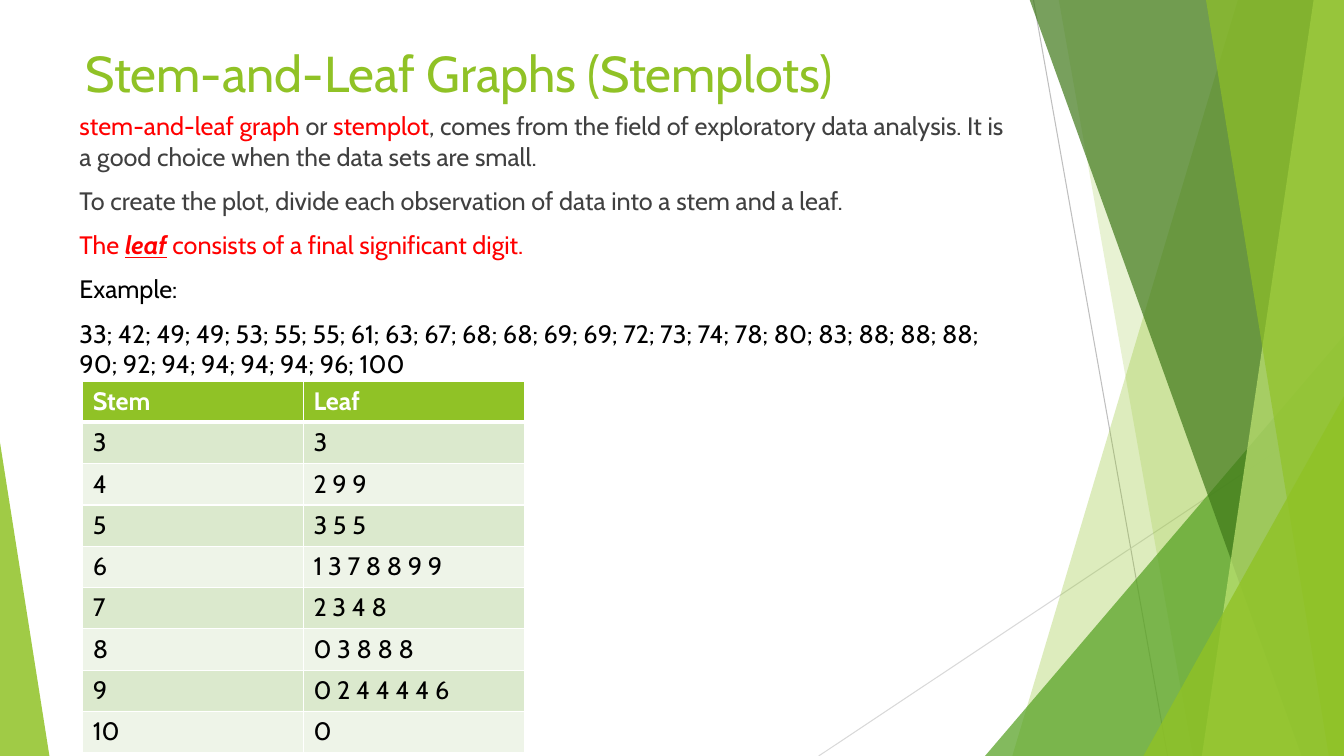
"""Build the stem-and-leaf graphs slide."""
import lxml.etree
import pptx
import pptx.dml.color
import pptx.enum.shapes
import pptx.oxml.ns
import pptx.util

Inches, Pt = pptx.util.Inches, pptx.util.Pt
RGBColor = pptx.dml.color.RGBColor
qn = pptx.oxml.ns.qn

WHITE = RGBColor(0xFF, 0xFF, 0xFF)
BLACK = RGBColor(0x00, 0x00, 0x00)
RED = RGBColor(0xFF, 0x00, 0x00)
GRAY = RGBColor(0x40, 0x40, 0x40)
LIME = RGBColor(0x90, 0xC2, 0x26)
GREEN = RGBColor(0x54, 0xA0, 0x21)
FOREST = RGBColor(0x3F, 0x78, 0x19)
PALE_LIME = RGBColor(0xC0, 0xE4, 0x74)
BAND_DARK = RGBColor(0xDB, 0xE9, 0xCD)
BAND_LIGHT = RGBColor(0xEE, 0xF4, 0xE8)
LINE_DARK = RGBColor(0xBF, 0xBF, 0xBF)
LINE_LIGHT = RGBColor(0xD9, 0xD9, 0xD9)

FONT = "Cabin"
WIDTH, HEIGHT = 13.33, 7.5

TITLE = [[("Stem-and-Leaf Graphs (Stemplots)", {"color": LIME, "size": Pt(36)})]]
BODY = [
    [("stem-and-leaf graph ", {"color": RED}), ("or ", {"color": GRAY}),
     ("stemplot", {"color": RED}),
     (", comes from the field of exploratory data analysis. It is a good choice "
      "when the data sets are small.", {"color": GRAY})],
    [("To create the plot, divide each observation of data into a stem and a leaf.",
      {"color": GRAY})],
    [("The ", {"color": RED}),
     ("leaf", {"color": RED, "bold": True, "italic": True, "underline": True}),
     (" consists of a final significant digit.", {"color": RED})],
    [("Example:", {"color": BLACK})],
    [("33; 42; 49; 49; 53; 55; 55; 61; 63; 67; 68; 68; 69; 69; 72; 73; 74; 78; 80; "
      "83; 88; 88; 88; 90; 92; 94; 94; 94; 94; 96; 100", {"color": BLACK})],
]
STEMPLOT = [
    ("Stem", "Leaf"),
    ("3", "3"),
    ("4", "2 9 9"),
    ("5", "3 5 5"),
    ("6", "1 3 7 8 8 9 9"),
    ("7", "2 3 4 8"),
    ("8", "0 3 8 8 8"),
    ("9", "0 2 4 4 4 4 6"),
    ("10", "0"),
]
LINES = [
    ((10.25, 0, 11.58, HEIGHT), LINE_DARK),
    ((WIDTH, 4.03, 8.12, HEIGHT), LINE_LIGHT),
]
FACETS = [
    ("band", (12.28, 10.04), LIME, 30),
    ("band", (10.5, 11.83), LIME, 20),
    ("triangle", (9.77, 3.33, 3.56, 1), GREEN, 72),
    ("band", (10.21, 12.91), FOREST, 70),
    ("band", (13.03, 11.92), PALE_LIME, 70),
    ("band", (11.96, 13.18), LIME, 65),
    ("triangle", (11.34, 3.93, 1.99, 1), LIME, 80),
    ("triangle", (0, 4.39, 0.49, 0), LIME, 85),
]


def add_line(s, ends, color):
    line = s.shapes.add_connector(
        pptx.enum.shapes.MSO_CONNECTOR.STRAIGHT, *map(Inches, ends))
    line.line.color.rgb = color
    line.line.width = Pt(0.75)
    lxml.etree.SubElement(line._element.spPr, qn("a:effectLst"))


def add_facet(s, kind, place, color, opacity):
    if kind == "band":
        top_x, bottom_x = place
        fb = s.shapes.build_freeform(Inches(top_x), Inches(-0.01))
        corners = [(WIDTH, -0.01), (WIDTH, HEIGHT), (bottom_x, HEIGHT)]
        fb.add_line_segments([(Inches(x), Inches(y)) for x, y in corners])
        sp = fb.convert_to_shape()
    else:
        left, top, width, apex = place
        sp = s.shapes.add_shape(
            pptx.enum.shapes.MSO_SHAPE.ISOSCELES_TRIANGLE,
            *map(Inches, (left, top, width, HEIGHT - top)))
        sp.adjustments[0] = apex
    sp.shadow.inherit = False
    sp.fill.solid()
    sp.fill.fore_color.rgb = color
    srgb = sp._element.spPr.find(".//" + qn("a:srgbClr"))
    lxml.etree.SubElement(srgb, qn("a:alpha"), val=str(opacity * 1000))
    sp.line.fill.background()


def add_run(p, text, formats):
    r = p.add_run()
    r.text = text
    for name, value in {"name": FONT, "size": Pt(18), **formats}.items():
        if name == "color":
            r.font.color.rgb = value
        else:
            setattr(r.font, name, value)


def add_text(s, box, paragraphs, space_before):
    tf = s.shapes.add_textbox(*map(Inches, box)).text_frame
    tf.word_wrap = True
    for i, runs in enumerate(paragraphs):
        p = tf.add_paragraph() if i else tf.paragraphs[0]
        p.space_before = Pt(space_before)
        for text, formats in runs:
            add_run(p, text, formats)


def add_borders(cell, widths):
    tcPr = cell._tc.get_or_add_tcPr()
    for side, width in widths.items():
        ln = lxml.etree.SubElement(tcPr, qn("a:ln" + side), w=str(Pt(width)))
        fill = lxml.etree.SubElement(ln, qn("a:solidFill"))
        lxml.etree.SubElement(fill, qn("a:srgbClr"), val=str(WHITE))


def add_stemplot(s, left, top, col_width, row_height):
    rows, cols = len(STEMPLOT), len(STEMPLOT[0])
    table = s.shapes.add_table(
        rows, cols, Inches(left), Inches(top),
        Inches(col_width * cols), Inches(row_height * rows)).table
    for col in table.columns:
        col.width = Inches(col_width)
    for i, values in enumerate(STEMPLOT):
        table.rows[i].height = Inches(row_height)
        fill = LIME if i == 0 else (BAND_LIGHT, BAND_DARK)[i % 2]
        formats = {"color": BLACK if i else WHITE, "bold": i == 0}
        for j, value in enumerate(values):
            cell = table.cell(i, j)
            add_borders(cell, {"L": 1, "R": 1, "T": 3 if i == 1 else 1,
                               "B": 3 if i == 0 else 1})
            cell.fill.solid()
            cell.fill.fore_color.rgb = fill
            add_run(cell.text_frame.paragraphs[0], value, formats)


def main():
    prs = pptx.Presentation()
    prs.slide_width, prs.slide_height = Inches(WIDTH), Inches(HEIGHT)
    s = prs.slides.add_slide(prs.slide_layouts[6])
    for ends, color in LINES:
        add_line(s, ends, color)
    for facet in FACETS:
        add_facet(s, *facet)
    add_text(s, (0.75, 0.37, 9.4, 1.14), TITLE, 0)
    add_text(s, (0.69, 1.05, 9.4, 2.84), BODY, 10)
    add_stemplot(s, 0.82, 3.78, 2.19, 0.41)
    prs.save("out.pptx")


if __name__ == "__main__":
    main()
